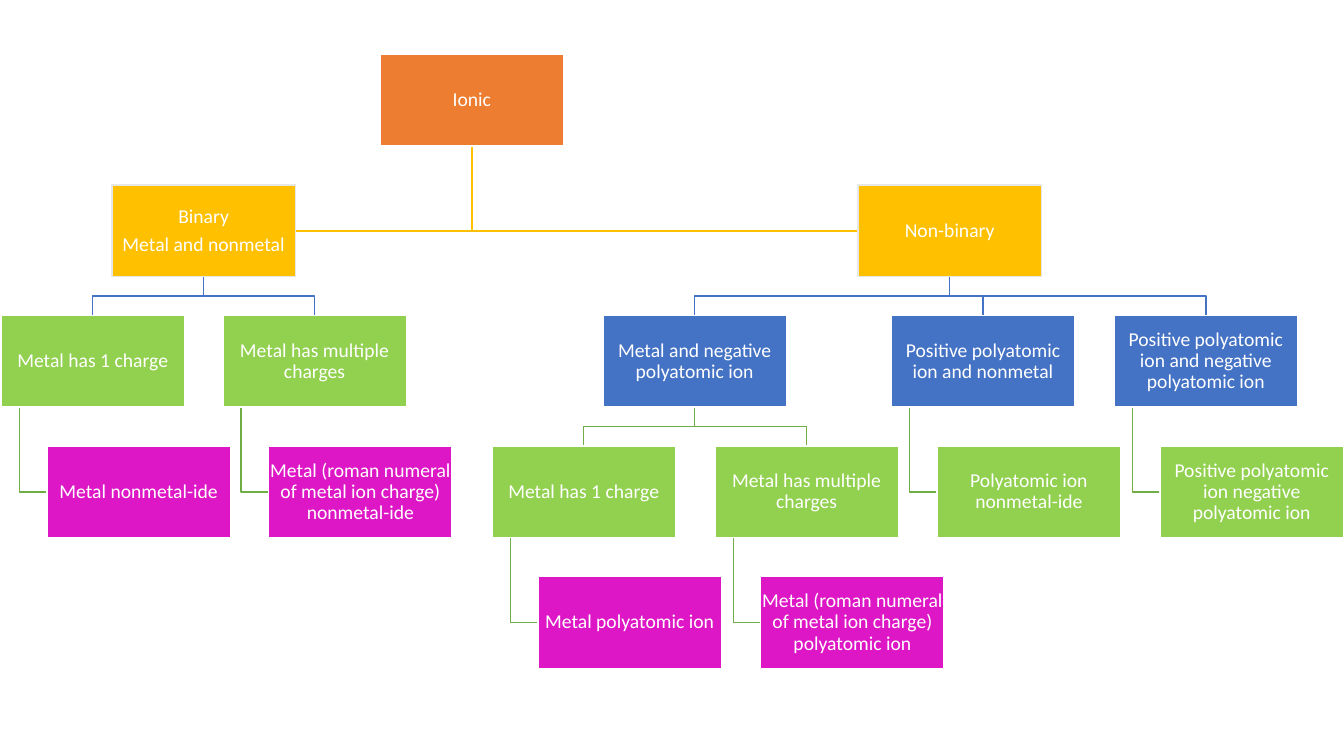
from dataclasses import dataclass

from pptx import Presentation
from pptx.dml.color import RGBColor
from pptx.enum.shapes import MSO_SHAPE
from pptx.enum.text import MSO_ANCHOR, PP_ALIGN
from pptx.util import Inches, Pt

RECTANGLE = MSO_SHAPE.RECTANGLE
MIDDLE = MSO_ANCHOR.MIDDLE
CENTER = PP_ALIGN.CENTER


@dataclass(frozen=True)
class Theme:
    font: str = "Calibri"
    size: int = 14
    white: str = "FFFFFF"
    gray: str = "E7E7E7"
    orange: str = "ED7D31"
    gold: str = "FFC000"
    lime: str = "92D050"
    blue: str = "4472C4"
    magenta: str = "DD17C5"
    green: str = "70AD47"


THEME = Theme()

NODES = {
    "ionic": ("Ionic", None, 3.77, THEME.orange),
    "binary": ("Binary\nMetal and nonmetal", "ionic", 1.11, THEME.gold),
    "single": ("Metal has 1 charge", "binary", 0.01, THEME.lime),
    "single name": ("Metal nonmetal-ide", "single", None, THEME.magenta),
    "multiple": ("Metal has multiple charges", "binary", 2.21, THEME.lime),
    "multiple name": ("Metal (roman numeral of metal ion charge) nonmetal-ide",
                      "multiple", None, THEME.magenta),
    "non-binary": ("Non-binary", "ionic", 8.51, THEME.gold),
    "negative": ("Metal and negative polyatomic ion", "non-binary", 5.98, THEME.blue),
    "negative single": ("Metal has 1 charge", "negative", 4.88, THEME.lime),
    "negative single name": ("Metal polyatomic ion", "negative single", None, THEME.magenta),
    "negative multiple": ("Metal has multiple charges", "negative", 7.09, THEME.lime),
    "negative multiple name": ("Metal (roman numeral of metal ion charge) polyatomic ion",
                               "negative multiple", None, THEME.magenta),
    "positive": ("Positive polyatomic ion and nonmetal", "non-binary", 8.84, THEME.blue),
    "positive name": ("Polyatomic ion nonmetal-ide", "positive", None, THEME.lime),
    "both": ("Positive polyatomic ion and negative polyatomic ion",
             "non-binary", 11.05, THEME.blue),
    "both name": ("Positive polyatomic ion negative polyatomic ion",
                  "both", None, THEME.lime),
}

BOX_WIDTH, BOX_HEIGHT = 1.82, 0.91
FIRST_TOP, LAST_TOP, LAST_LEVEL = 0.54, 5.72, 4
ROW_STEP = (LAST_TOP - FIRST_TOP) / LAST_LEVEL
HANG_INDENT = BOX_WIDTH / 4
STEM_INDENT = BOX_WIDTH / 10
LINE_COLORS = {1: THEME.gold, 2: THEME.blue, 3: THEME.green, 4: THEME.green}


def place_nodes():
    places = {}
    for name, (_, parent, left, _) in NODES.items():
        level = places[parent][2] + 1 if parent else 0
        if left is None:
            left = places[parent][0] + HANG_INDENT
        places[name] = (left, FIRST_TOP + level * ROW_STEP, level)
    return places


def route(parent, child, hangs):
    parent_left, parent_top, _ = parent
    left, top, level = child
    center = parent_left + BOX_WIDTH / 2
    bottom = parent_top + BOX_HEIGHT
    middle = top + BOX_HEIGHT / 2
    if hangs:
        stem = parent_left + STEM_INDENT
        return [(stem, bottom), (stem, middle), (left, middle)]
    if level == 1:
        side = left + BOX_WIDTH if left < parent_left else left
        return [(center, bottom), (center, middle), (side, middle)]
    target, bend = left + BOX_WIDTH / 2, (bottom + top) / 2
    return [(center, bottom), (center, bend), (target, bend), (target, top)]


def style_line(shape, color):
    shape.shadow.inherit = False
    shape.line.color.rgb = RGBColor.from_string(color)
    shape.line.width = Pt(1)


def add_link(slide, points, color):
    corners = [(Inches(x), Inches(y)) for x, y in points]
    builder = slide.shapes.build_freeform(*corners[0])
    builder.add_line_segments(corners[1:], close=False)
    link = builder.convert_to_shape()
    link.fill.background()
    style_line(link, color)


def write_text(frame, text, *, font, size, color, inset=0.01):
    frame.word_wrap = True
    frame.vertical_anchor = MIDDLE
    frame.margin_left = frame.margin_right = Inches(inset)
    frame.margin_top = frame.margin_bottom = Inches(inset)
    for index, line in enumerate(text.split("\n")):
        para = frame.add_paragraph() if index else frame.paragraphs[0]
        para.alignment = CENTER
        para.line_spacing = 0.9
        para.space_after = Pt(size * 0.35)
        span = para.add_run()
        span.text = line
        span.font.name = font
        span.font.size = Pt(size)
        span.font.color.rgb = RGBColor.from_string(color)


def add_node(slide, text, left, top, fill):
    box = slide.shapes.add_shape(RECTANGLE, Inches(left), Inches(top),
                                 Inches(BOX_WIDTH), Inches(BOX_HEIGHT))
    box.fill.solid()
    box.fill.fore_color.rgb = RGBColor.from_string(fill)
    style_line(box, THEME.gray if fill == THEME.gold else THEME.white)
    write_text(box.text_frame, text, font=THEME.font, size=THEME.size, color=THEME.white)


def main():
    deck = Presentation()
    deck.slide_width, deck.slide_height = Inches(13.33), Inches(7.5)
    slide = deck.slides.add_slide(deck.slide_layouts.get_by_name("Blank"))
    places = place_nodes()
    for name, (_, parent, left, _) in NODES.items():
        if parent:
            child = places[name]
            points = route(places[parent], child, hangs=left is None)
            add_link(slide, points, LINE_COLORS[child[2]])
    for name, (text, _, _, fill) in NODES.items():
        left, top, _ = places[name]
        add_node(slide, text, left, top, fill)
    deck.save("out.pptx")


if __name__ == "__main__":
    main()
